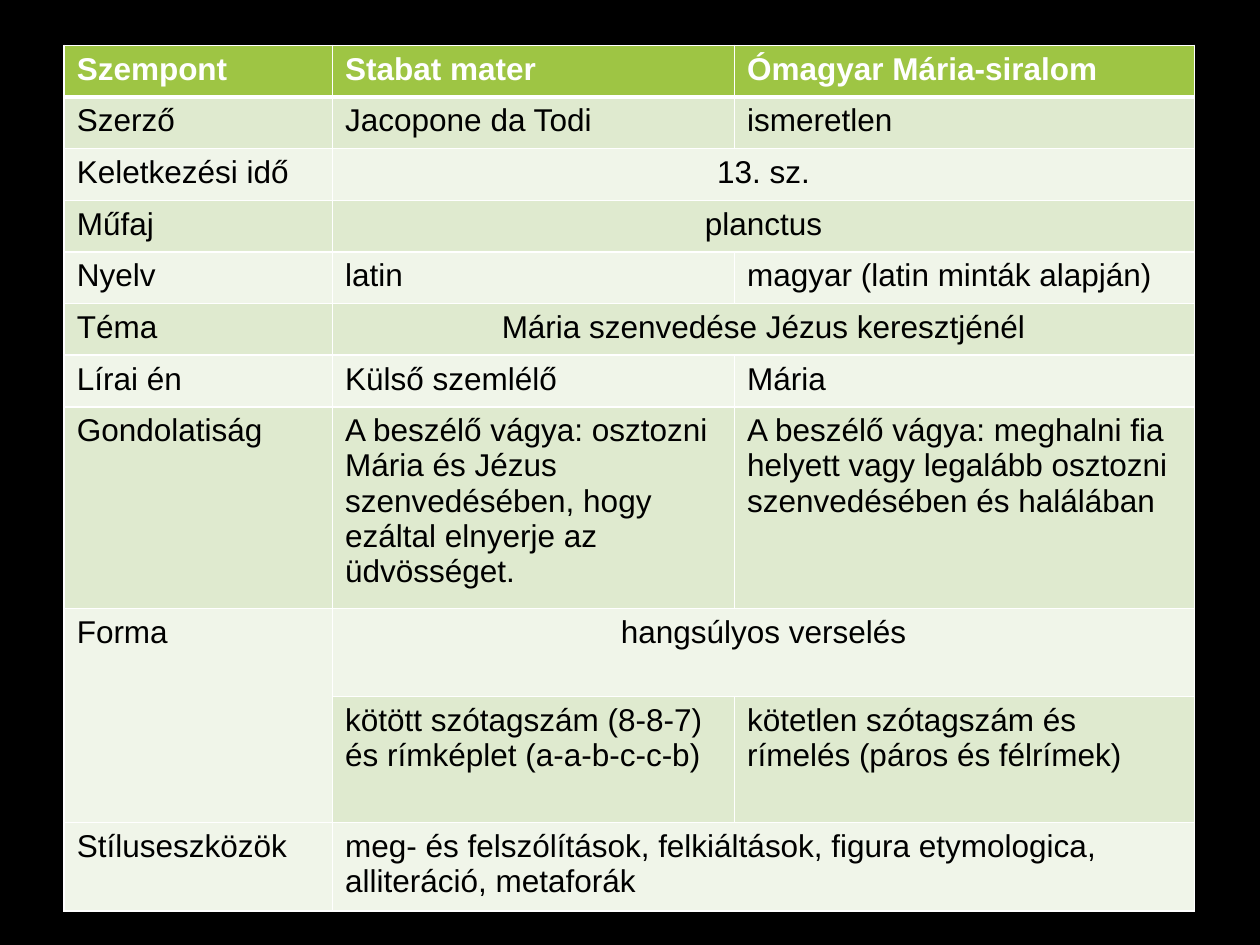
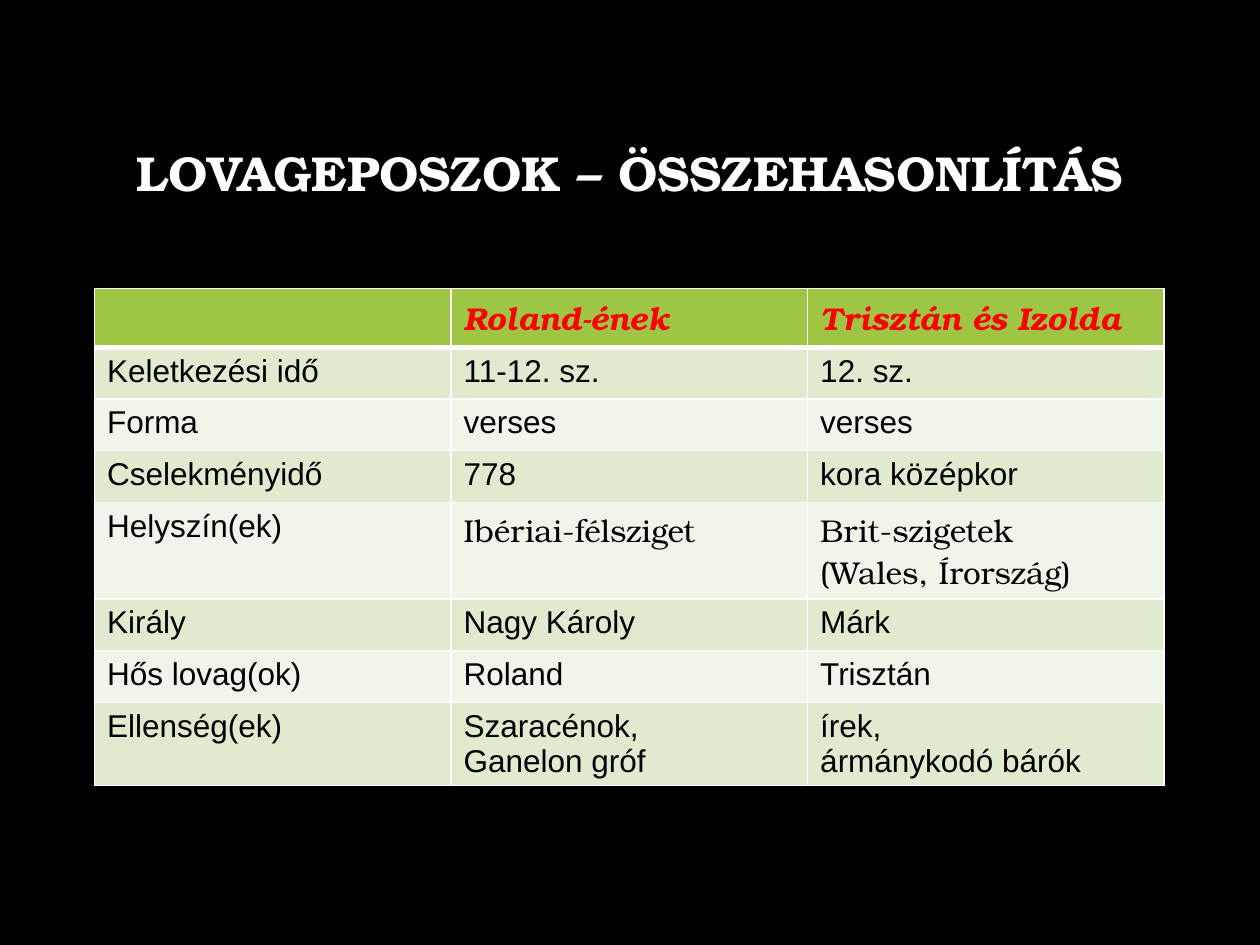
from lxml.etree import SubElement
from pptx import Presentation
from pptx.dml.color import RGBColor
from pptx.enum.text import MSO_ANCHOR, PP_ALIGN
from pptx.oxml.ns import qn
from pptx.util import Inches, Pt

BLACK = RGBColor(0x00, 0x00, 0x00)
WHITE = RGBColor(0xFF, 0xFF, 0xFF)
RED = RGBColor(0xFF, 0x00, 0x00)
HEADER_GREEN = RGBColor(0x9E, 0xC5, 0x44)
BAND_COLORS = (RGBColor(0xF0, 0xF5, 0xE9), RGBColor(0xDF, 0xEA, 0xCF))

SANS = "Arial"
SERIF = "TeX Gyre Bonum"
ROW_HEIGHT = 0.41

# An empty string in a spanned position is covered by its neighbour.
LAMENT_ROWS = [
    ("Szempont", "Stabat mater", "Ómagyar Mária-siralom"),
    ("Szerző", "Jacopone da Todi", "ismeretlen"),
    ("Keletkezési idő", "13. sz.", ""),
    ("Műfaj", "planctus", ""),
    ("Nyelv", "latin", "magyar (latin minták alapján)"),
    ("Téma", "Mária szenvedése Jézus keresztjénél", ""),
    ("Lírai én", "Külső szemlélő", "Mária"),
    ("Gondolatiság",
     "A beszélő vágya: osztozni Mária és Jézus szenvedésében, "
     "hogy ezáltal elnyerje az üdvösséget.",
     "A beszélő vágya: meghalni fia helyett vagy legalább osztozni "
     "szenvedésében és halálában"),
    ("Forma", "hangsúlyos verselés", ""),
    ("", "kötött szótagszám (8-8-7) és rímképlet (a-a-b-c-c-b)",
     "kötetlen szótagszám és rímelés (páros és félrímek)"),
    ("Stíluseszközök",
     "meg- és felszólítások, felkiáltások, figura etymologica, "
     "alliteráció, metaforák", ""),
]
LAMENT_COLUMNS = [2.13, 3.19, 3.65]
LAMENT_HEIGHTS = [ROW_HEIGHT] * 7 + [1.6, 0.7, 1, 0.7]
SHARED_ROWS = {2: PP_ALIGN.CENTER, 3: PP_ALIGN.CENTER, 5: PP_ALIGN.CENTER,
               8: PP_ALIGN.CENTER, 10: PP_ALIGN.LEFT}
FORM_ROW = 8

EPIC_TITLE = "LOVAGEPOSZOK – ÖSSZEHASONLÍTÁS"
EPIC_ROWS = [
    ("", "Roland-ének", "Trisztán és Izolda"),
    ("Keletkezési idő", "11-12. sz.", "12. sz."),
    ("Forma", "verses", "verses"),
    ("Cselekményidő", "778", "kora középkor"),
    ("Helyszín(ek)", "Ibériai-félsziget", "Brit-szigetek\n(Wales, Írország)"),
    ("Király", "Nagy Károly", "Márk"),
    ("Hős lovag(ok)", "Roland", "Trisztán"),
    ("Ellenség(ek)", "Szaracénok,\nGanelon gróf", "írek,\nármánykodó bárók"),
]
EPIC_COLUMNS = [2.83] * 3
EPIC_HEIGHTS = [ROW_HEIGHT] * len(EPIC_ROWS)
PLACE_ROW = 4


def style_text(text_frame, size, font_name, color, bold=False, italic=False):
    for paragraph in text_frame.paragraphs:
        for run in paragraph.runs:
            run.font.size = Pt(size)
            run.font.name = font_name
            run.font.color.rgb = color
            run.font.bold = bold
            run.font.italic = italic


def add_borders(cell, top, bottom):
    """Draw white cell borders; top and bottom are widths in points."""
    properties = cell._tc.get_or_add_tcPr()
    for side, width in (("L", 1), ("R", 1), ("T", top), ("B", bottom)):
        line = SubElement(properties, qn(f"a:ln{side}"), w=str(Pt(width)))
        fill = SubElement(line, qn("a:solidFill"))
        SubElement(fill, qn("a:srgbClr"), val=str(WHITE))


def add_comparison(slide, left, top, rows, columns, heights):
    """Add a banded table with a green header and return it."""
    table = slide.shapes.add_table(
        len(rows), len(columns), Inches(left), Inches(top),
        Inches(sum(columns)), Inches(sum(heights))).table
    for column, width in zip(table.columns, columns):
        column.width = Inches(width)
    for row, height in zip(table.rows, heights):
        row.height = Inches(height)
    for row_index, texts in enumerate(rows):
        is_header = row_index == 0
        for column_index, text in enumerate(texts):
            cell = table.cell(row_index, column_index)
            add_borders(cell, top=3 if row_index == 1 else 1,
                        bottom=3 if is_header else 1)
            cell.fill.solid()
            cell.fill.fore_color.rgb = (
                HEADER_GREEN if is_header else BAND_COLORS[row_index % 2])
            cell.text_frame.text = text
            style_text(cell.text_frame, 18, SANS,
                       WHITE if is_header else BLACK, bold=is_header)
    return table


def build_lament_slide(presentation):
    slide = presentation.slides.add_slide(presentation.slide_layouts[6])
    table = add_comparison(slide, 0.51, 0.36, LAMENT_ROWS,
                           LAMENT_COLUMNS, LAMENT_HEIGHTS)
    for row_index, alignment in SHARED_ROWS.items():
        cell = table.cell(row_index, 1)
        cell.merge(table.cell(row_index, 2))
        cell.text_frame.paragraphs[0].alignment = alignment
    table.cell(FORM_ROW, 0).merge(table.cell(FORM_ROW + 1, 0))


def build_epic_slide(presentation):
    slide = presentation.slides.add_slide(presentation.slide_layouts[5])
    title = slide.shapes.title
    title.left, title.top = Inches(0.75), Inches(0.67)
    title.width, title.height = Inches(8.49), Inches(1.45)
    title.text_frame.text = EPIC_TITLE
    title.text_frame.vertical_anchor = MSO_ANCHOR.MIDDLE
    paragraph = title.text_frame.paragraphs[0]
    paragraph.alignment = PP_ALIGN.CENTER
    paragraph.line_spacing = 0.9
    style_text(title.text_frame, 28, SERIF, WHITE, bold=True)

    table = add_comparison(slide, 0.75, 2.29, EPIC_ROWS,
                           EPIC_COLUMNS, EPIC_HEIGHTS)
    for column_index in (1, 2):
        style_text(table.cell(0, column_index).text_frame, 18, SERIF, RED,
                   bold=True, italic=True)
        style_text(table.cell(PLACE_ROW, column_index).text_frame, 18, SERIF,
                   BLACK)


def main():
    presentation = Presentation()
    presentation.slide_width = Inches(10)
    presentation.slide_height = Inches(7.5)
    background = presentation.slide_master.background.fill
    background.solid()
    background.fore_color.rgb = BLACK
    build_lament_slide(presentation)
    build_epic_slide(presentation)
    presentation.save("out.pptx")


if __name__ == "__main__":
    main()
